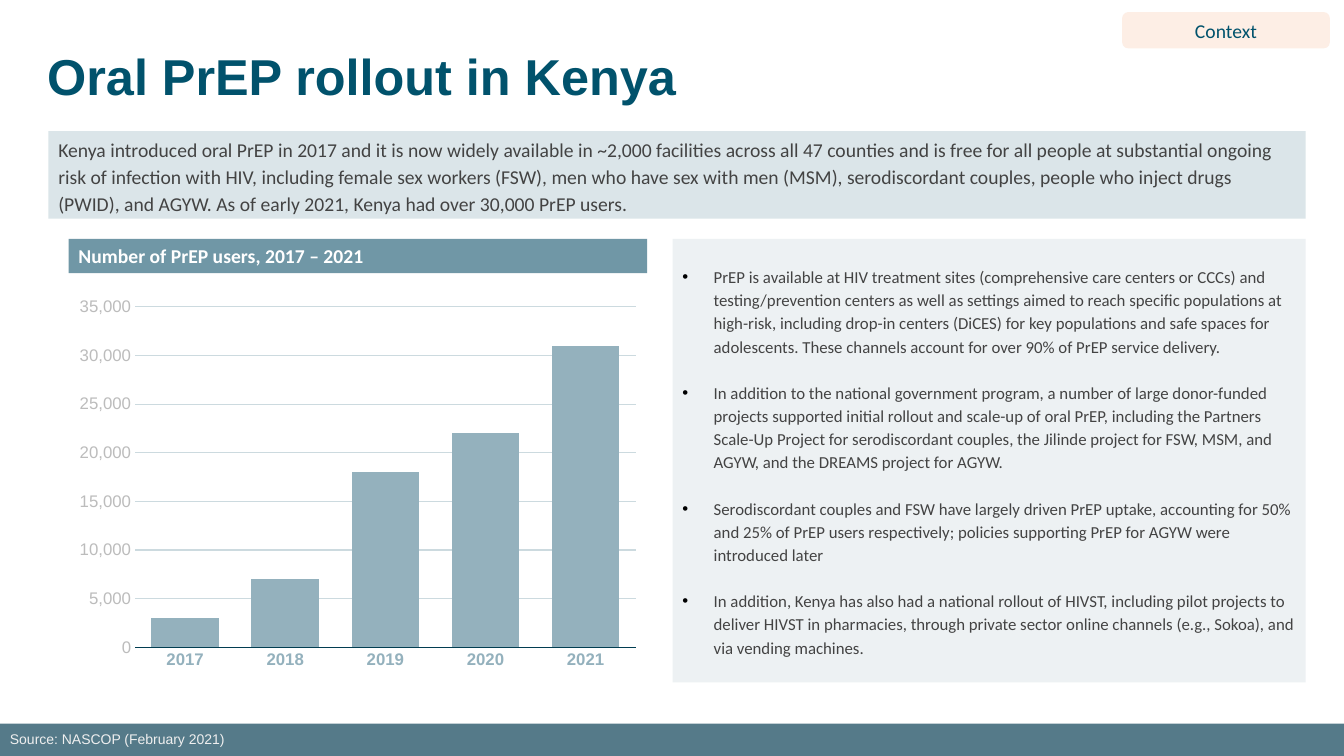
from lxml import etree
from pptx import Presentation
from pptx.chart.data import CategoryChartData
from pptx.dml.color import RGBColor
from pptx.enum.chart import XL_CHART_TYPE, XL_TICK_MARK
from pptx.enum.shapes import MSO_SHAPE
from pptx.enum.text import MSO_ANCHOR, PP_ALIGN
from pptx.oxml.ns import qn
from pptx.util import Inches, Pt

RECT, ROUNDED = MSO_SHAPE.RECTANGLE, MSO_SHAPE.ROUNDED_RECTANGLE
TOP, MIDDLE, BOTTOM = MSO_ANCHOR.TOP, MSO_ANCHOR.MIDDLE, MSO_ANCHOR.BOTTOM
LEFT, CENTER = PP_ALIGN.LEFT, PP_ALIGN.CENTER
COLUMNS = XL_CHART_TYPE.COLUMN_CLUSTERED
NO_TICK = XL_TICK_MARK.NONE

COLORS = {
    "navy": "01526C", "axis": "013D51", "footer": "557A89", "source": "EFEFEF",
    "header": "7097A6", "bars": "94B1BD", "grid": "CCDADF", "summary": "DBE5E9",
    "panel": "EDF1F3", "tag": "FDEEE5", "body": "434343", "scale": "BCBCBC",
    "white": "FFFFFF", "black": "000000",
}

SUMMARY = (
    "Kenya introduced oral PrEP in 2017 and it is now widely available in ~2,000 facilities "
    "across all 47 counties and is free for all people at substantial ongoing risk of infection "
    "with HIV, including female sex workers (FSW), men who have sex with men (MSM), serodiscordant "
    "couples, people who inject drugs (PWID), and AGYW. As of early 2021, Kenya had over 30,000 "
    "PrEP users."
)
FINDINGS = [
    "PrEP is available at HIV treatment sites (comprehensive care centers or CCCs) and "
    "testing/prevention centers as well as settings aimed to reach specific populations at "
    "high-risk, including drop-in centers (DiCES) for key populations and safe spaces for "
    "adolescents. These channels account for over 90% of PrEP service delivery.",
    "In addition to the national government program, a number of large donor-funded projects "
    "supported initial rollout and scale-up of oral PrEP, including the Partners Scale-Up Project "
    "for serodiscordant couples, the Jilinde project for FSW, MSM, and AGYW, and the DREAMS "
    "project for AGYW.",
    "Serodiscordant couples and FSW have largely driven PrEP uptake, accounting for 50% and 25% "
    "of PrEP users respectively; policies supporting PrEP for AGYW were introduced later",
    "In addition, Kenya has also had a national rollout of HIVST, including pilot projects to "
    "deliver HIVST in pharmacies, through private sector online channels (e.g., Sokoa), and via "
    "vending machines.",
]
PREP_USERS = {"2017": 3000, "2018": 7000, "2019": 18000, "2020": 22000, "2021": 31000}


def rgb(color):
    return RGBColor.from_string(COLORS[color])


def style_font(font, size, color, bold=False, name="Calibri"):
    font.size, font.bold, font.name = Pt(size), bold, name
    font.color.rgb = rgb(color)


def add_block(slide, box, fill, kind=RECT):
    block = slide.shapes.add_shape(kind, *map(Inches, box))
    block.shadow.inherit = False
    block.fill.solid()
    block.fill.fore_color.rgb = rgb(fill)
    block.line.fill.background()
    return block


def add_text_area(slide, box):
    return slide.shapes.add_textbox(*map(Inches, box))


def set_frame(holder, anchor, inset=0.05):
    frame = holder.text_frame
    frame.word_wrap = True
    frame.vertical_anchor = anchor
    frame.margin_left = frame.margin_right = Inches(0.1)
    frame.margin_top = frame.margin_bottom = Inches(inset)
    return frame


def write(holder, text, size, color, anchor=MIDDLE, inset=0.05, align=LEFT,
          spacing=1.0, bold=False, name="Calibri"):
    paragraph = set_frame(holder, anchor, inset).paragraphs[0]
    paragraph.text = text
    paragraph.alignment = align
    paragraph.line_spacing = spacing
    style_font(paragraph.font, size, color, bold, name)


def add_bullet(paragraph):
    properties = paragraph._p.get_or_add_pPr()
    indent = Inches(0.31)
    properties.set("marL", str(indent))
    properties.set("indent", str(-indent))
    bullet_color = etree.SubElement(properties, qn("a:buClr"))
    etree.SubElement(bullet_color, qn("a:srgbClr"), val=COLORS["black"])
    etree.SubElement(properties, qn("a:buFont"), typeface="Arial")
    etree.SubElement(properties, qn("a:buChar"), char="•")


def add_heading(slide, box):
    left, top, width, height = box
    write(add_text_area(slide, (left, top + 0.11, width - 0.38, height - 0.11)),
          "Oral PrEP rollout in Kenya", 36, "navy", BOTTOM, spacing=0.9, bold=True, name="Arial")
    tag = add_block(slide, (left + width - 2.06, top, 2.06, 0.36), "tag", ROUNDED)
    write(tag, "Context", 14, "navy", align=CENTER)


def add_summary(slide, box):
    write(add_block(slide, box, "summary"), SUMMARY, 14, "body", inset=0.1, spacing=1.15)


def place_plot(chart, **fractions):
    plot_area = chart._chartSpace.chart.plotArea
    for layout in plot_area.findall(qn("c:layout")):
        plot_area.remove(layout)
    layout = etree.Element(qn("c:layout"))
    plot_area.insert(0, layout)
    manual = etree.SubElement(layout, qn("c:manualLayout"))
    settings = {"layoutTarget": "inner", "xMode": "edge", "yMode": "edge", **fractions}
    for tag, value in settings.items():
        etree.SubElement(manual, qn(f"c:{tag}"), val=str(value))


def add_users_chart(slide, box):
    left, top, width, height = box
    write(add_block(slide, (left, top, width, 0.34), "header"),
          "Number of PrEP users, 2017 – 2021", 14, "white", TOP, bold=True)

    data = CategoryChartData(number_format="#,##0")
    data.categories = list(PREP_USERS)
    data.add_series("PrEP users", list(PREP_USERS.values()))
    chart_box = (left, top + 0.52, width, height - 0.52)
    chart = slide.shapes.add_chart(COLUMNS, *map(Inches, chart_box), data).chart
    chart.has_legend = chart.has_title = False
    style_font(chart.font, 10, "navy", name="Arial")
    place_plot(chart, x=0.115, y=0.04, w=0.865, h=0.88)

    plot = chart.plots[0]
    plot.vary_by_categories = False
    plot.gap_width, plot.overlap = 48, -27
    bars = plot.series[0].format.fill
    bars.solid()
    bars.fore_color.rgb = rgb("bars")

    years, users = chart.category_axis, chart.value_axis
    years.major_tick_mark = users.major_tick_mark = NO_TICK
    style_font(years.tick_labels.font, 12, "bars", bold=True, name="Arial")
    style_font(users.tick_labels.font, 12, "scale", name="Arial")
    users.tick_labels.number_format = "#,##0"
    users.tick_labels.number_format_is_linked = False
    users.minimum_scale, users.maximum_scale, users.major_unit = 0, 35000, 5000
    users.format.line.fill.background()
    for line, color in ((years.format.line, "axis"), (users.major_gridlines.format.line, "grid")):
        line.color.rgb = rgb(color)
        line.width = Pt(0.75)


def add_findings(slide, box):
    frame = set_frame(add_block(slide, box, "panel"), MIDDLE)
    for index, finding in enumerate(FINDINGS):
        paragraph = frame.add_paragraph() if index else frame.paragraphs[0]
        paragraph.text = finding
        paragraph.alignment = LEFT
        paragraph.line_spacing = 1.15
        paragraph.space_before = Pt(16.5 if index else 0)
        add_bullet(paragraph)
        style_font(paragraph.font, 12, "body")


def add_footer(slide, box):
    left, top, width, height = box
    add_block(slide, box, "footer")
    write(add_text_area(slide, (left, top + 0.02, 11.78, height - 0.02)),
          "Source: NASCOP (February 2021)", 10, "source", TOP, name="Arial")


def main():
    deck = Presentation()
    deck.slide_width, deck.slide_height = Inches(13.33), Inches(7.5)
    slide = deck.slides.add_slide(deck.slide_layouts[6])
    add_footer(slide, (0, 7.18, 13.33, 0.32))
    add_findings(slide, (6.67, 2.37, 6.28, 4.4))
    add_summary(slide, (0.48, 1.3, 12.47, 0.87))
    add_heading(slide, (0.37, 0.12, 12.82, 0.99))
    add_users_chart(slide, (0.68, 2.37, 5.74, 4.36))
    deck.save("out.pptx")


if __name__ == "__main__":
    main()
